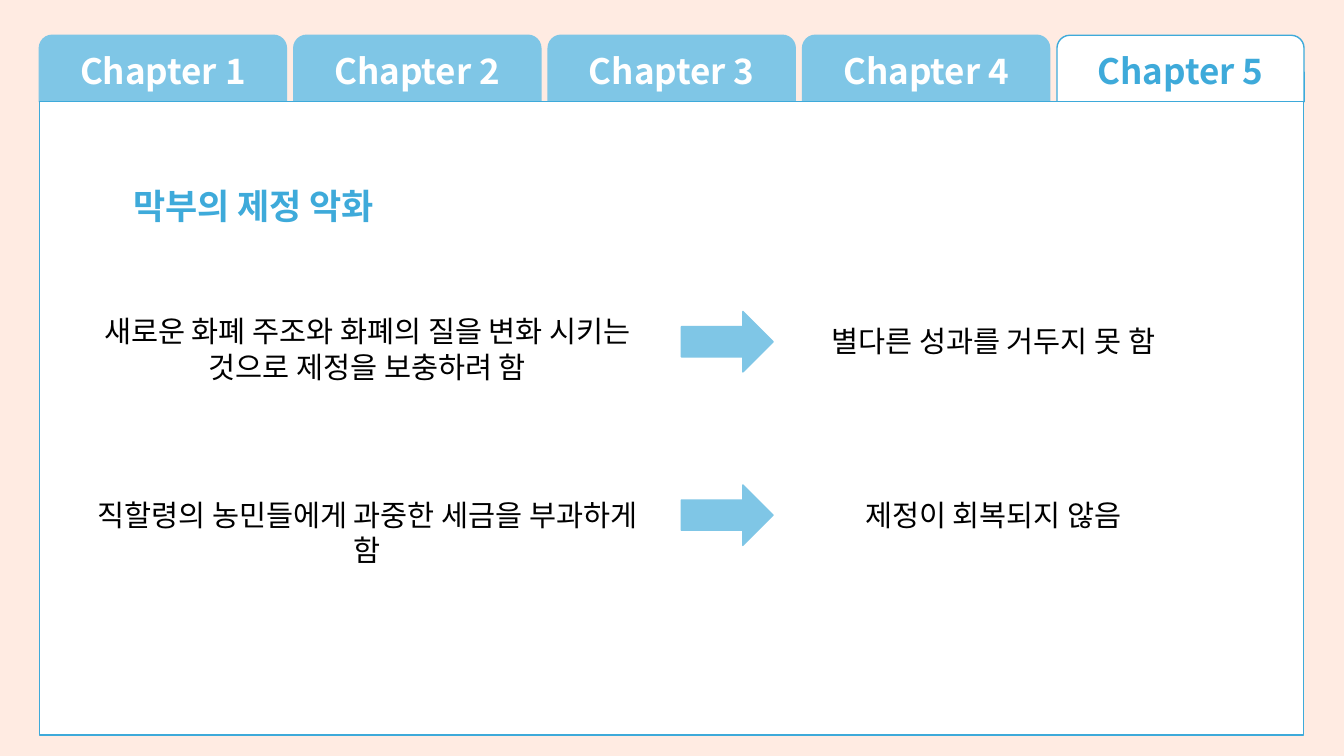
from pptx import Presentation
from pptx.dml.color import RGBColor
from pptx.enum import shapes, text
from pptx.oxml import ns
from pptx.util import Pt
from lxml import etree

FONT = "Noto Sans CJK KR"
PINK = RGBColor(0xFF, 0xEB, 0xE2)
SKY = RGBColor(0x7F, 0xC6, 0xE6)
BLUE = RGBColor(0x3E, 0xAA, 0xDA)
WHITE = RGBColor(0xFF, 0xFF, 0xFF)
BLACK = RGBColor(0, 0, 0)
KIND = shapes.MSO_SHAPE


def write(shape, words, size, color, bold=False):
    """Put one centred paragraph into a shape."""
    frame = shape.text_frame
    frame.word_wrap = True
    frame.text = words
    para = frame.paragraphs[0]
    para.alignment = text.PP_ALIGN.CENTER
    para.line_spacing = Pt(size * 1.2)
    font = para.font
    font.name, font.size, font.bold = FONT, Pt(size), bold
    font.color.rgb = color
    props = para._p.pPr.find(ns.qn("a:defRPr"))
    etree.SubElement(props, ns.qn("a:ea")).set("typeface", FONT)


def draw(slide, kind, box, fill, line):
    """Add a flat preset shape with a thin outline."""
    shape = slide.shapes.add_shape(kind, *map(Pt, box))
    shape.shadow.inherit = False
    shape.fill.solid()
    shape.fill.fore_color.rgb = fill
    shape.line.color.rgb = line
    shape.line.width = Pt(1)
    return shape


def label(slide, words, box):
    """Add a text box of body size."""
    shape = slide.shapes.add_textbox(*map(Pt, box))
    write(shape, words, 21, BLACK)


def tabs(slide, box, count, gap):
    """Draw the row of chapter tabs, the last one active."""
    left, top, width, height = box
    wide = (width - gap * (count - 1)) / count
    for i in range(count):
        live = i == count - 1
        fill, line, ink = (WHITE, BLUE, BLUE) if live else (SKY, SKY, WHITE)
        spot = (left + i * (wide + gap), top, wide, height)
        tab = draw(slide, KIND.ROUND_2_SAME_RECTANGLE, spot, fill, line)
        tab.adjustments[0] = 0.194
        tab.text_frame.vertical_anchor = text.MSO_ANCHOR.MIDDLE
        write(tab, f"Chapter {i + 1}", 25, ink, True)


def panel(slide, box):
    """Draw the page panel and set the title on it."""
    left, top, width, height = box
    draw(slide, KIND.RECTANGLE, box, WHITE, BLUE)
    title = slide.shapes.title
    slide.shapes._spTree.append(title._element)
    title.left, title.top = Pt(left + 20.9), Pt(top + 55.4)
    title.width, title.height = Pt(264.2), Pt(37.4)
    write(title, "막부의 제정 악화", 25, BLUE, True)


def row(slide, box, cause, result, drop):
    """Draw a cause, an arrow and its result."""
    left, top, width, height = box
    wide = 402.5
    label(slide, cause, (left, top, wide, height))
    label(slide, result, (left + width - wide, top + drop, wide, 32.4))
    arrow = (left + 425.5, top + drop - 5, 65.5, 43.2)
    draw(slide, KIND.RIGHT_ARROW, arrow, SKY, SKY)


def main():
    """Build and save the slide."""
    deck = Presentation()
    deck.slide_width, deck.slide_height = Pt(960), Pt(540)
    slide = deck.slides.add_slide(deck.slide_layouts[5])
    slide.background.fill.solid()
    slide.background.fill.fore_color.rgb = PINK
    tabs(slide, (28.1, 25.2, 903.4, 47.5), 5, 5.2)
    panel(slide, (28.1, 72.7, 902.9, 452.2))
    rows = [
        (220.3, "새로운 화폐 주조와 화폐의 질을 변화 시키는 것으로 제정을 보충하려 함",
         "별다른 성과를 거두지 못 함", 7.2),
        (351.4, "직할령의 농민들에게 과중한 세금을 부과하게 함",
         "제정이 회복되지 않음", 0),
    ]
    for top, cause, result, drop in rows:
        row(slide, (61.2, top, 849.6, 58.3), cause, result, drop)
    deck.save("out.pptx")


if __name__ == "__main__":
    main()
